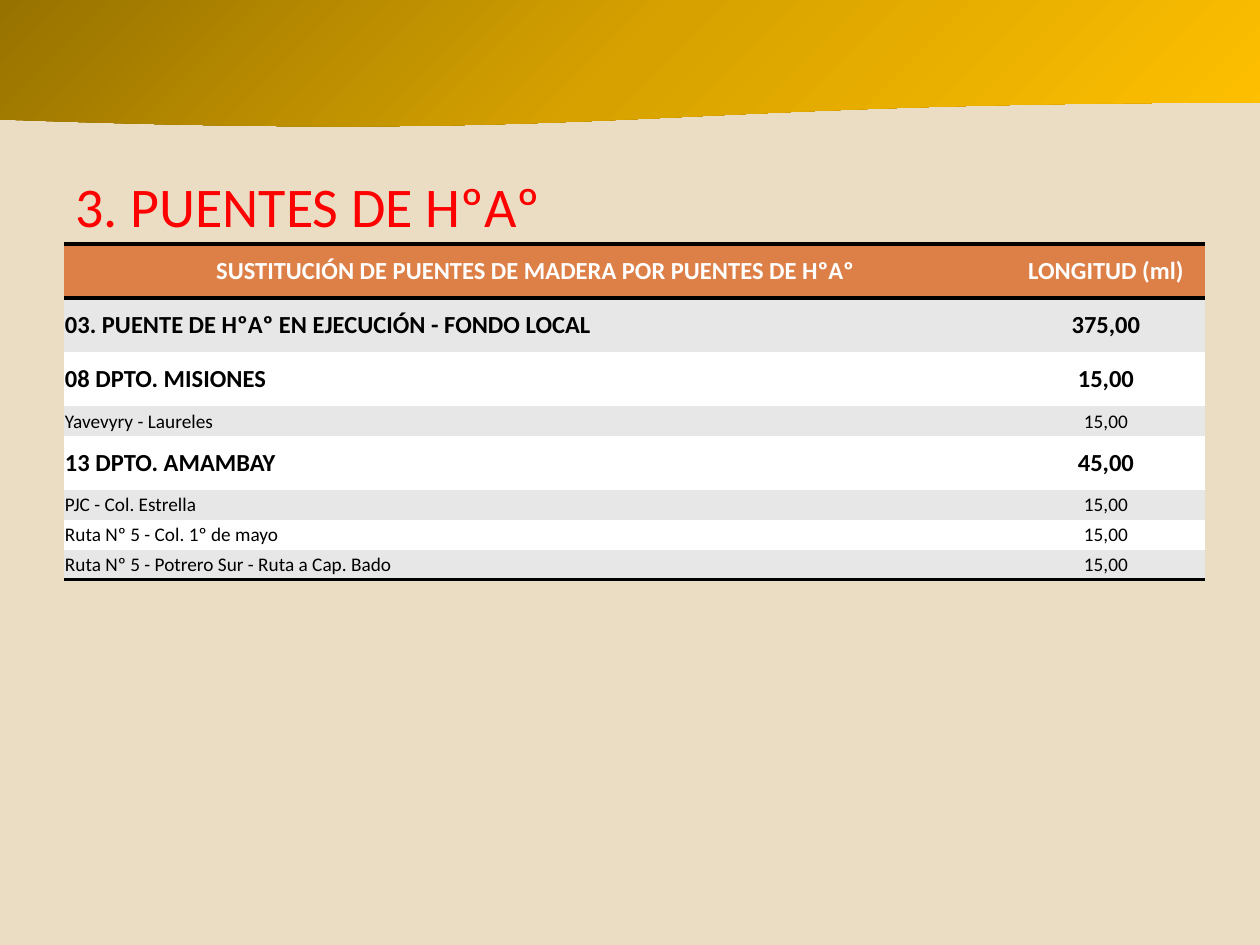
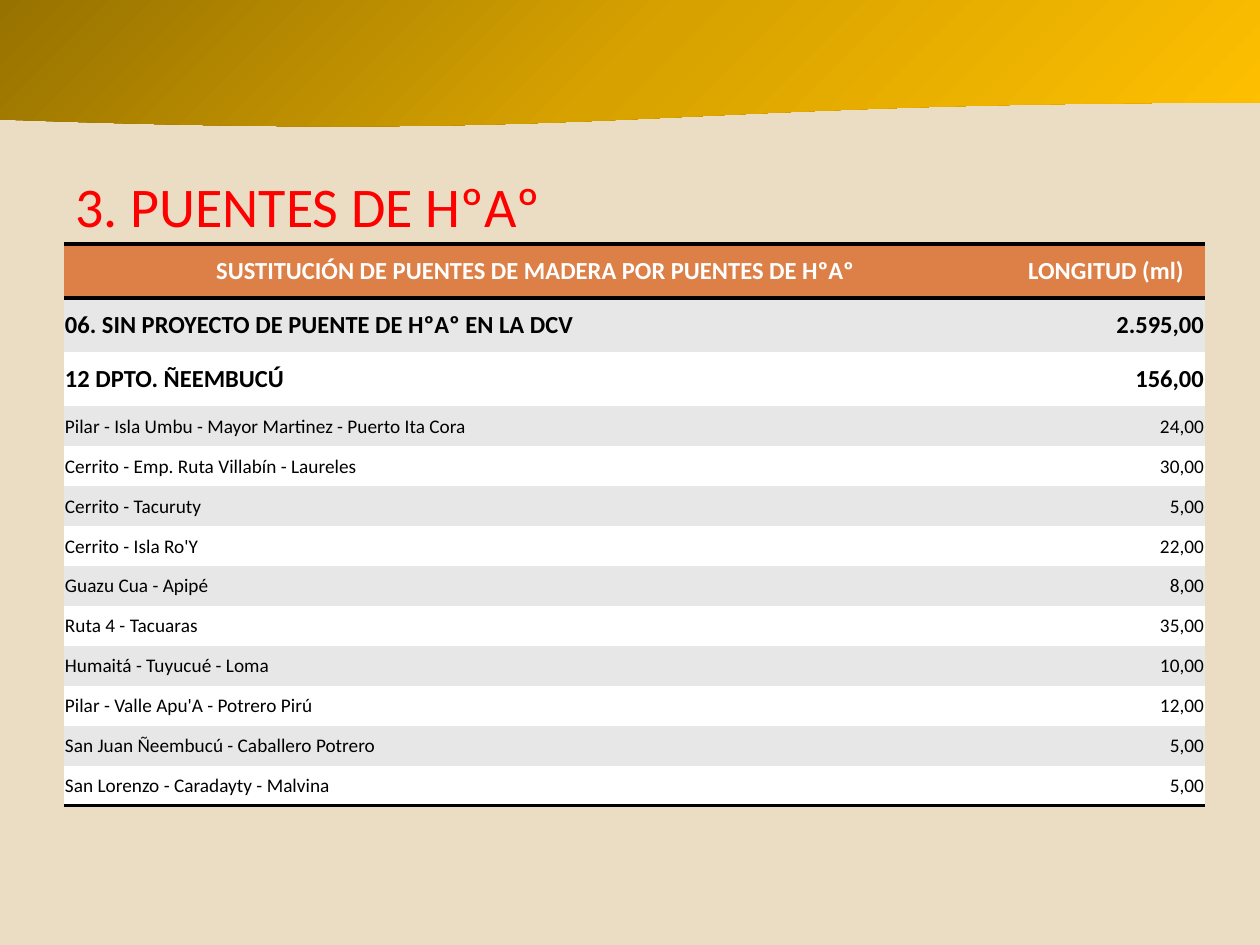
from copy import deepcopy

from lxml import etree
from pptx import Presentation, util as u
from pptx.dml.color import RGBColor
from pptx.enum import shapes, text
from pptx.oxml import ns

SAND = RGBColor(0xEB, 0xDD, 0xC3)
RED = RGBColor(0xFF, 0x00, 0x00)
ORANGE = RGBColor(0xDD, 0x80, 0x47)
GRAY = RGBColor(0xE7, 0xE7, 0xE7)
WHITE = RGBColor(0xFF, 0xFF, 0xFF)
BLACK = RGBColor(0x00, 0x00, 0x00)
GOLDS = (RGBColor(0x97, 0x72, 0x00), RGBColor(0xD7, 0xA2, 0x00), RGBColor(0xFF, 0xC0, 0x00))

FONT = "Calibri"
SCALE = 914400 / 126
PLAIN = "{2D5ABB26-0587-4C30-8999-92F81FD0307C}"
LEFT, MID, RIGHT = text.PP_ALIGN.LEFT, text.PP_ALIGN.CENTER, text.PP_ALIGN.RIGHT

TITLE = "3. PUENTES DE HºAº"
HEAD = ("SUSTITUCIÓN DE PUENTES DE MADERA POR PUENTES DE HºAº", "LONGITUD (ml)")
COLS = (943, 198)
TALL = 54

# Each row: label, length, and whether it is a total
WORKS = [
    ("03. PUENTE DE HºAº EN EJECUCIÓN - FONDO LOCAL", "375,00", True),
    ("08 DPTO. MISIONES", "15,00", True),
    ("Yavevyry - Laureles", "15,00", False),
    ("13 DPTO. AMAMBAY", "45,00", True),
    ("PJC - Col. Estrella", "15,00", False),
    ("Ruta Nº 5 - Col. 1º de mayo", "15,00", False),
    ("Ruta Nº 5 - Potrero Sur - Ruta a Cap. Bado", "15,00", False),
]
PLANS = [
    ("06. SIN PROYECTO DE PUENTE DE HºAº EN LA DCV", "2.595,00", True),
    ("12 DPTO. ÑEEMBUCÚ", "156,00", True),
    ("Pilar - Isla Umbu - Mayor Martinez - Puerto Ita Cora", "24,00", False),
    ("Cerrito - Emp. Ruta Villabín - Laureles", "30,00", False),
    ("Cerrito - Tacuruty", "5,00", False),
    ("Cerrito - Isla Ro'Y", "22,00", False),
    ("Guazu Cua - Apipé", "8,00", False),
    ("Ruta 4 - Tacuaras", "35,00", False),
    ("Humaitá - Tuyucué - Loma", "10,00", False),
    ("Pilar - Valle Apu'A - Potrero Pirú", "12,00", False),
    ("San Juan Ñeembucú - Caballero Potrero", "5,00", False),
    ("San Lorenzo - Caradayty - Malvina", "5,00", False),
]


def px(n):
    return u.Emu(round(n * SCALE))


def rule(cell, side):
    """Draw a black 2 pt line on the T or B side of a cell."""
    line = etree.Element(ns.qn(f"a:ln{side}"), w=str(u.Pt(2)))
    fill = etree.SubElement(line, ns.qn("a:solidFill"))
    etree.SubElement(fill, ns.qn("a:srgbClr"), val=str(BLACK))
    cell._tc.get_or_add_tcPr().insert(0, line)


class Deck:
    def __init__(self):
        self.prs = Presentation()
        self.prs.slide_width, self.prs.slide_height = px(1260), px(945)
        self.slide = None

    def page(self):
        """Start a slide with the shared ground, band and title."""
        self.slide = self.prs.slides.add_slide(self.prs.slide_layouts[6])
        ground = self.slide.background.fill
        ground.solid()
        ground.fore_color.rgb = SAND
        self.band()
        self.title()

    def band(self):
        wave = self.slide.shapes.add_shape(
            shapes.MSO_SHAPE.FLOWCHART_DOCUMENT, 0, 0, px(1260), px(128))
        wave.shadow.inherit = False
        wave.line.fill.background()
        wave.fill.gradient()
        wave.fill.gradient_angle = 315
        stops = wave._element.spPr.find(".//" + ns.qn("a:gsLst"))
        stops.append(deepcopy(stops[-1]))
        for i, (stop, gold) in enumerate(zip(wave.fill.gradient_stops, GOLDS)):
            stop.position = i / 2
            stop.color.rgb = gold

    def title(self):
        box = self.slide.shapes.add_textbox(px(63), px(126), px(1134), px(158))
        frame = box.text_frame
        frame.word_wrap = True
        frame.vertical_anchor = text.MSO_ANCHOR.MIDDLE
        frame.text = TITLE
        self.font(frame.paragraphs[0], 32, RED)

    def font(self, para, size, color, bold=False):
        for run in para.runs:
            run.font.name = FONT
            run.font.size = u.Pt(size)
            run.font.bold = bold
            run.font.color.rgb = color

    def cell(self, cell, words, align, fill, size, color, bold):
        cell.text_frame.text = words
        cell.vertical_anchor = text.MSO_ANCHOR.MIDDLE
        cell.margin_left = cell.margin_right = cell.margin_top = px(1)
        cell.margin_bottom = 0
        cell.fill.solid()
        cell.fill.fore_color.rgb = fill
        para = cell.text_frame.paragraphs[0]
        para.alignment = align
        self.font(para, size, color, bold)

    def table(self, rows, low, align):
        """Add the table; low is the height of a detail row, align places the lengths."""
        highs = [TALL] + [TALL if total else low for _, _, total in rows]
        grid = self.slide.shapes.add_table(
            len(highs), len(COLS), px(64), px(244), px(sum(COLS)), px(sum(highs))).table
        grid._tbl.tblPr.find(ns.qn("a:tableStyleId")).text = PLAIN
        for col, wide in zip(grid.columns, COLS):
            col.width = px(wide)
        for row, high in zip(grid.rows, highs):
            row.height = px(high)
        for c, words in enumerate(HEAD):
            self.cell(grid.cell(0, c), words, MID, ORANGE, 14, WHITE, True)
        for r, (name, length, total) in enumerate(rows, 1):
            fill = GRAY if r % 2 else WHITE
            size = 14 if total else 11
            for c, (words, side) in enumerate(((name, LEFT), (length, align))):
                self.cell(grid.cell(r, c), words, side, fill, size, BLACK, total)
        for c in range(len(COLS)):
            rule(grid.cell(0, c), "B")
            rule(grid.cell(0, c), "T")
            rule(grid.cell(len(rows), c), "B")


def main():
    deck = Deck()
    for rows, low, align in ((WORKS, 30, MID), (PLANS, 40, RIGHT)):
        deck.page()
        deck.table(rows, low, align)
    deck.prs.save("out.pptx")


if __name__ == "__main__":
    main()
